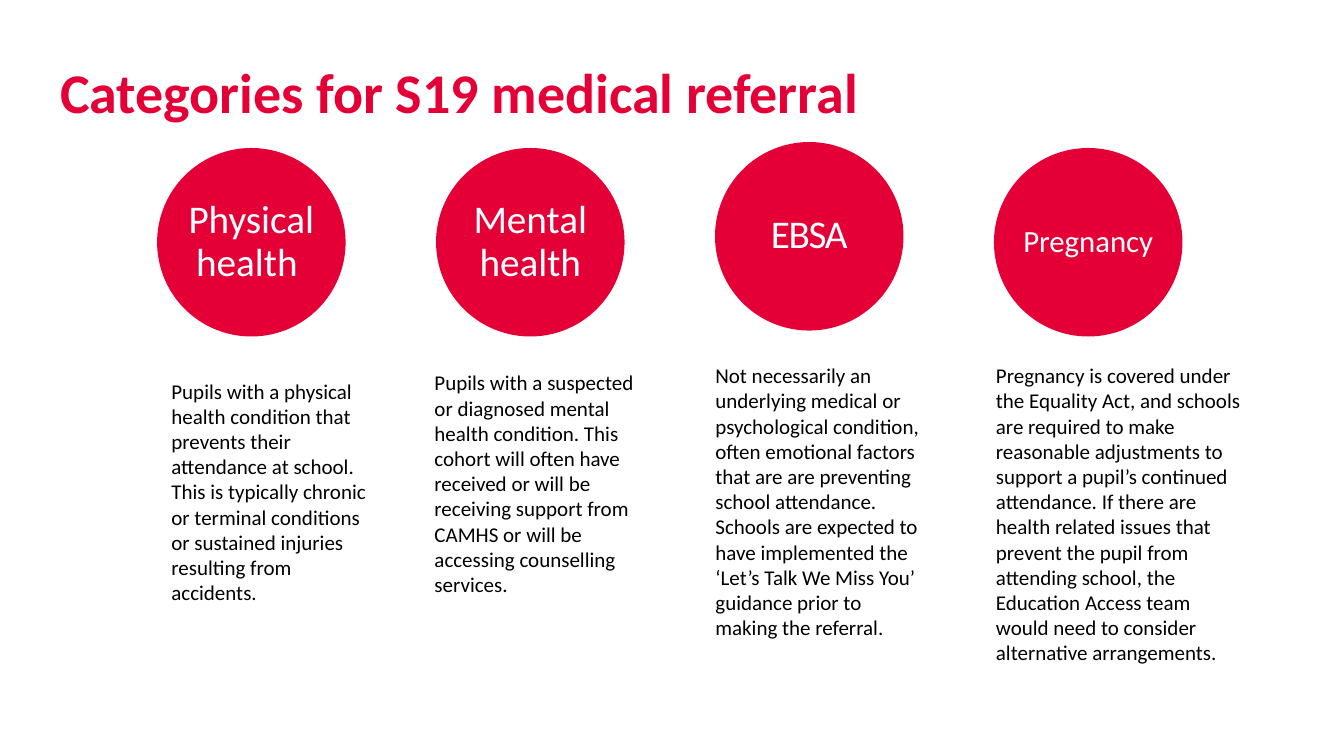
"""Build a slide showing four categories for S19 medical referral."""
from pptx import Presentation
from pptx.dml.color import RGBColor
from pptx.enum.shapes import MSO_SHAPE
from pptx.enum.text import MSO_ANCHOR, PP_ALIGN
from pptx.util import Cm, Pt

TITLE = "Categories for S19 medical referral"
CATEGORIES = [
    {"name": "Physical health ", "size": 28, "spacing": 0, "circle_top": 3.73,
     "note_box": (4.32, 9.53, 5.2, 7.01),
     "note": "Pupils with a physical health condition that prevents their attendance at school. "
             "This is typically chronic or terminal conditions or sustained injuries resulting "
             "from accidents."},
    {"name": "Mental health", "size": 28, "spacing": 0, "circle_top": 3.73,
     "note_box": (10.95, 9.32, 5.2, 7.01),
     "note": "Pupils with a suspected or diagnosed mental health condition. This cohort will "
             "often have received or will be receiving support from CAMHS or will be accessing "
             "counselling services."},
    {"name": "EBSA", "size": 28, "spacing": -100, "circle_top": 3.58,
     "note_box": (18.03, 9.14, 5.2, 7.16),
     "note": "Not necessarily an underlying medical or psychological condition, often emotional "
             "factors that are are preventing school attendance. Schools are expected to have "
             "implemented the ‘Let’s Talk We Miss You’ guidance prior to making the referral."},
    {"name": "Pregnancy ", "size": 22, "spacing": 0, "circle_top": 3.73,
     "note_box": (25.1, 9.14, 6.25, 9.17),
     "note": "Pregnancy is covered under the Equality Act, and schools are required to make "
             "reasonable adjustments to support a pupil’s continued attendance. If there are "
             "health related issues that prevent the pupil from attending school, the Education "
             "Access team would need to consider alternative arrangements."},
]
FONT = "Calibri"
RED = RGBColor(0xE4, 0x00, 0x37)
WHITE = RGBColor(0xFF, 0xFF, 0xFF)
BLACK = RGBColor(0x00, 0x00, 0x00)
TITLE_BOX = (1.52, 1.45, 20.57, 2.95)
FIRST_CIRCLE, CIRCLE_PITCH, DIAMETER = 3.96, 7.03, 4.75


def write(shape, text, size, color, bold=False, anchor=MSO_ANCHOR.TOP):
    frame = shape.text_frame
    frame.word_wrap = True
    frame.vertical_anchor = anchor
    frame.margin_left = frame.margin_right = frame.margin_top = frame.margin_bottom = 0
    para = frame.paragraphs[0]
    span = para.add_run()
    span.text = text
    span.font.name = FONT
    span.font.size = Pt(size)
    span.font.bold = bold
    span.font.color.rgb = color
    return para, span


def add_text(page, box, text, size, color, bold=False):
    shape = page.shapes.add_textbox(*map(Cm, box))
    return write(shape, text, size, color, bold)


def add_circle(page, left, category):
    circle = page.shapes.add_shape(
        MSO_SHAPE.OVAL, Cm(left), Cm(category["circle_top"]), Cm(DIAMETER), Cm(DIAMETER))
    circle.shadow.inherit = False
    circle.fill.solid()
    circle.fill.fore_color.rgb = RED
    circle.line.fill.background()
    para, span = write(circle, category["name"], category["size"], WHITE,
                       anchor=MSO_ANCHOR.MIDDLE)
    para.alignment = PP_ALIGN.CENTER
    para.line_spacing = 0.9
    if category["spacing"]:
        span.font._element.set("spc", str(category["spacing"]))


def main():
    deck = Presentation()
    deck.slide_width, deck.slide_height = Cm(33.87), Cm(19.05)
    page = deck.slides.add_slide(deck.slide_layouts[6])
    add_text(page, TITLE_BOX, TITLE, 40, RED, bold=True)
    for index, category in enumerate(CATEGORIES):
        add_circle(page, FIRST_CIRCLE + index * CIRCLE_PITCH, category)
        para, _ = add_text(page, category["note_box"], category["note"], 15, BLACK)
        para.space_after = Pt(11.3)
    deck.save("out.pptx")


if __name__ == "__main__":
    main()
